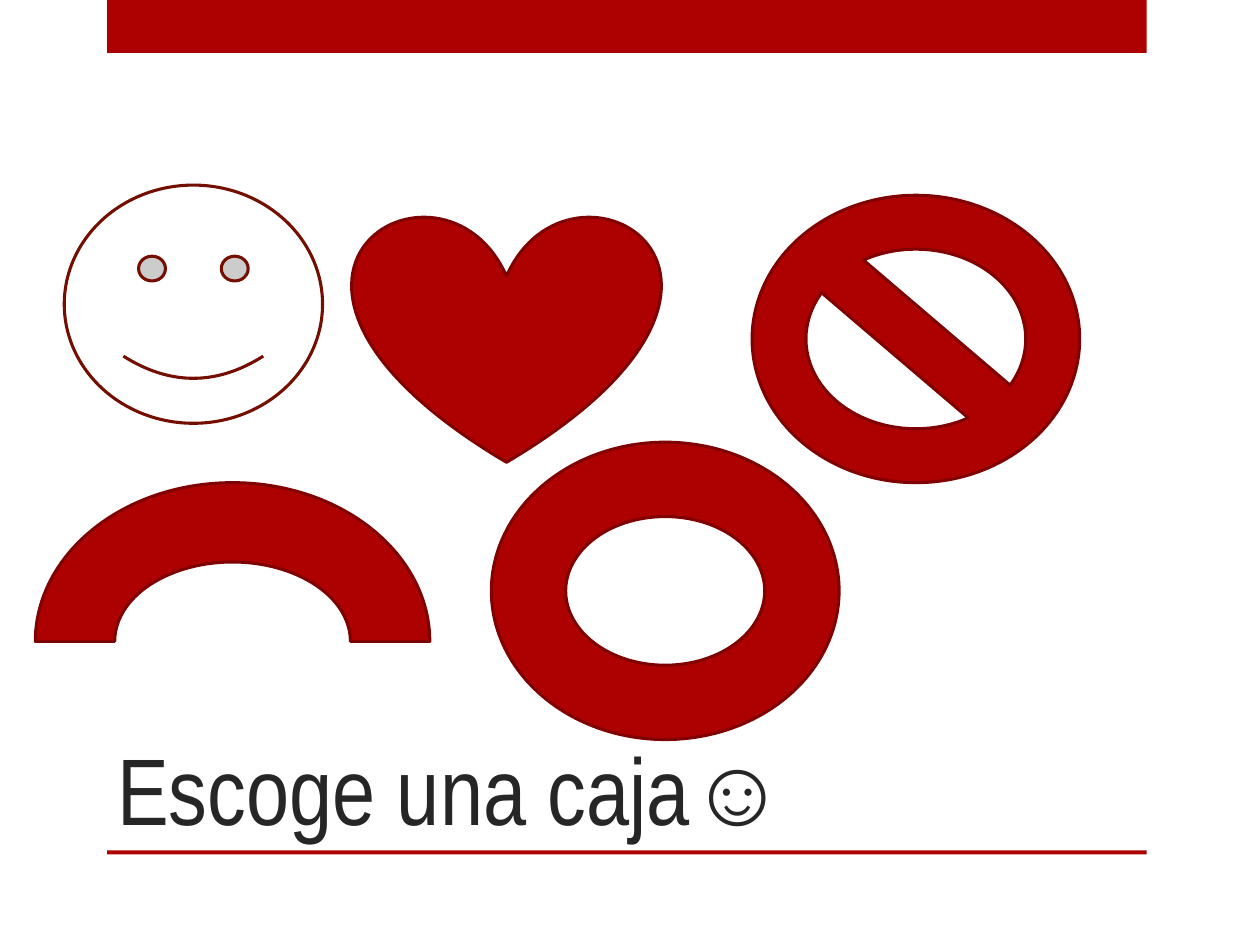
from pptx import Presentation
from pptx.dml.color import RGBColor
from pptx.enum.shapes import MSO_SHAPE
from pptx.enum.text import MSO_ANCHOR
from pptx.util import Pt

RED = RGBColor(0xAD, 0x01, 0x01)
DARK_RED = RGBColor(0x80, 0x01, 0x01)
BROWN = RGBColor(0x73, 0x0E, 0x00)
WHITE = RGBColor(0xFF, 0xFF, 0xFF)
CHARCOAL = RGBColor(0x26, 0x26, 0x26)

BARS = [(61.2, 0, 594, 30.2), (61.2, 486, 594, 2.2)]
FIGURES = [
    (MSO_SHAPE.SMILEY_FACE, (36.7, 105.8, 147.6, 136.1), WHITE, BROWN),
    (MSO_SHAPE.HEART, (201.6, 122.4, 175.7, 141.8), RED, DARK_RED),
    (MSO_SHAPE.NO_SYMBOL, (429.8, 111.6, 187.2, 164.2), RED, DARK_RED),
    (MSO_SHAPE.BLOCK_ARC, (20.2, 275.8, 225.4, 181.4), RED, DARK_RED),
    (MSO_SHAPE.DONUT, (280.8, 252.7, 198.7, 169.9), RED, DARK_RED),
]


def apply_format(target, values):
    for name, value in values.items():
        setattr(target, name, value)


def add_figure(slide, kind, box, fill_color, line_color=None):
    shape = slide.shapes.add_shape(kind, *map(Pt, box))
    shape.shadow.inherit = False
    shape.fill.solid()
    shape.fill.fore_color.rgb = fill_color
    if line_color is None:
        shape.line.fill.background()
    else:
        shape.line.color.rgb = line_color
        shape.line.width = Pt(1.75)


def add_title(slide, text, box):
    frame = slide.shapes.add_textbox(*map(Pt, box)).text_frame
    apply_format(frame, {"word_wrap": True, "vertical_anchor": MSO_ANCHOR.BOTTOM})
    run = frame.paragraphs[0].add_run()
    run.text = text
    apply_format(run.font, {"name": "Arial Narrow", "size": Pt(54)})
    run.font.color.rgb = CHARCOAL


def main():
    presentation = Presentation()
    apply_format(presentation, {"slide_width": Pt(720), "slide_height": Pt(540)})
    slide = presentation.slides.add_slide(presentation.slide_layouts[6])
    for box in BARS:
        add_figure(slide, MSO_SHAPE.RECTANGLE, box, RED)
    add_title(slide, "Escoge una caja☺", (59.8, 360, 534.2, 126))
    for figure in FIGURES:
        add_figure(slide, *figure)
    presentation.save("out.pptx")


if __name__ == "__main__":
    main()
